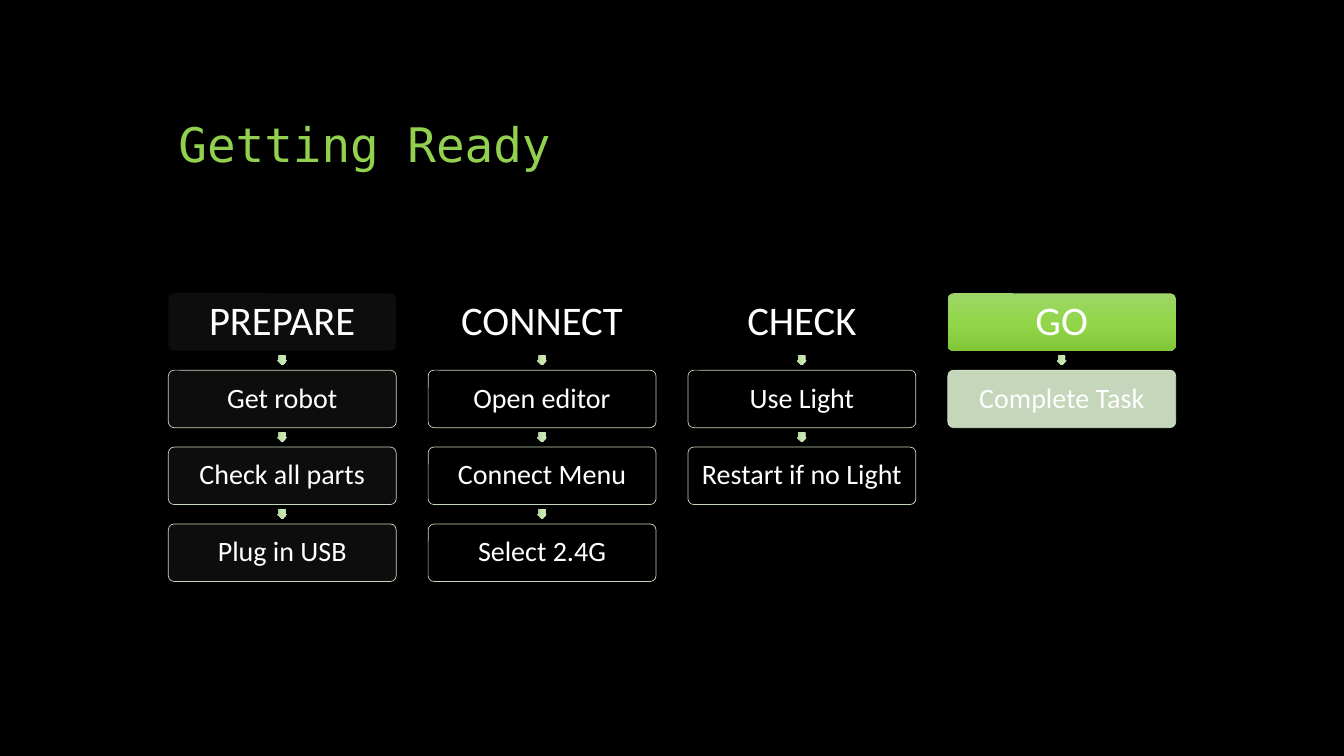
from lxml import etree
from pptx import Presentation, util as u
from pptx.dml import color
from pptx.enum import shapes, text
from pptx.oxml import ns

LEFT, TOP = 1.67, 2.91
COLUMN_STEP, ROW_STEP = 2.577, 0.763
BOX_WIDTH, BOX_HEIGHT = 2.26, 0.57
ARROW_SIZE = 0.1
PALE_GREEN = "DCEED0"
ARROW_GRADIENT = ["CFE9BD", "C7E7B0", "B0D199"]
GO_GRADIENT = ["9ED669", "92D64A", "82C63A"]

# heading, steps, heading fill, step fill
columns = [
    ("PREPARE", ["Get robot", "Check all parts", "Plug in USB"], "0D0D0D", "0D0D0D"),
    ("CONNECT", ["Open editor", "Connect Menu", "Select 2.4G"], "000000", "000000"),
    ("CHECK", ["Use Light", "Restart if no Light"], "000000", "000000"),
    ("GO", ["Complete Task"], GO_GRADIENT, PALE_GREEN),
]


def write(shape, words, size, font="Calibri", hex_color="FFFFFF",
          align=text.PP_ALIGN.CENTER, anchor=text.MSO_ANCHOR.MIDDLE, margin=0.04):
    frame = shape.text_frame
    frame.word_wrap = True
    frame.vertical_anchor = anchor
    frame.margin_left = frame.margin_right = u.Inches(margin)
    frame.margin_top = frame.margin_bottom = u.Inches(0.04)
    paragraph = frame.paragraphs[0]
    paragraph.alignment = align
    paragraph.line_spacing = 0.9
    run = paragraph.add_run()
    run.text = words
    run.font.size = u.Pt(size)
    run.font.name = font
    run.font.color.rgb = color.RGBColor.from_string(hex_color)


def paint(shape, colors):
    """Fill with one hex colour, or top to bottom with a list of them."""
    shape.shadow.inherit = False
    shape.line.fill.background()
    if isinstance(colors, str):
        shape.fill.solid()
        shape.fill.fore_color.rgb = color.RGBColor.from_string(colors)
    else:
        shape.fill.gradient()
        shape.fill.gradient_angle = 270
        stops = next(shape._element.iter(ns.qn("a:gsLst")))
        for stop in list(stops):
            stops.remove(stop)
        for index, hex_color in enumerate(colors):
            position = 100000 * index // (len(colors) - 1)
            stop = etree.SubElement(stops, ns.qn("a:gs"), pos=str(position))
            etree.SubElement(stop, ns.qn("a:srgbClr"), val=hex_color)


presentation = Presentation()
presentation.slide_width, presentation.slide_height = u.Inches(13.33), u.Inches(7.5)
slide = presentation.slides.add_slide(presentation.slide_layouts[5])
slide.background.fill.solid()
slide.background.fill.fore_color.rgb = color.RGBColor.from_string("000000")

title = slide.shapes.title
title.left, title.top = u.Inches(LEFT), u.Inches(0.5)
title.width, title.height = u.Inches(10), u.Inches(1.25)
write(title, "Getting Ready", 34, font="DejaVu Sans Mono", hex_color="92D050",
      align=text.PP_ALIGN.LEFT, anchor=text.MSO_ANCHOR.BOTTOM, margin=0.1)

for column, (heading, steps, heading_fill, step_fill) in enumerate(columns):
    left = LEFT + column * COLUMN_STEP
    for row, words in enumerate([heading] + steps):
        top = TOP + row * ROW_STEP
        if row > 0:
            arrow = slide.shapes.add_shape(
                shapes.MSO_SHAPE.RIGHT_ARROW,
                u.Inches(left + (BOX_WIDTH - ARROW_SIZE) / 2),
                u.Inches(top - (ROW_STEP - BOX_HEIGHT + ARROW_SIZE) / 2),
                u.Inches(ARROW_SIZE), u.Inches(ARROW_SIZE))
            arrow.rotation = 90
            arrow.adjustments[0] = 0.667
            paint(arrow, ARROW_GRADIENT)

        box = slide.shapes.add_shape(
            shapes.MSO_SHAPE.ROUNDED_RECTANGLE, u.Inches(left), u.Inches(top),
            u.Inches(BOX_WIDTH), u.Inches(BOX_HEIGHT))
        box.adjustments[0] = 0.1
        paint(box, step_fill if row else heading_fill)
        if row > 0:
            box.line.color.rgb = color.RGBColor.from_string(PALE_GREEN)
            box.line.width = u.Pt(0.5)
        # Pale green is 90% opaque in both fill and outline
        for tint in box._element.spPr.iter(ns.qn("a:srgbClr")):
            if tint.get("val") == PALE_GREEN:
                etree.SubElement(tint, ns.qn("a:alpha"), val="90000")
        write(box, words, 20 if row else 29)

presentation.save("out.pptx")
